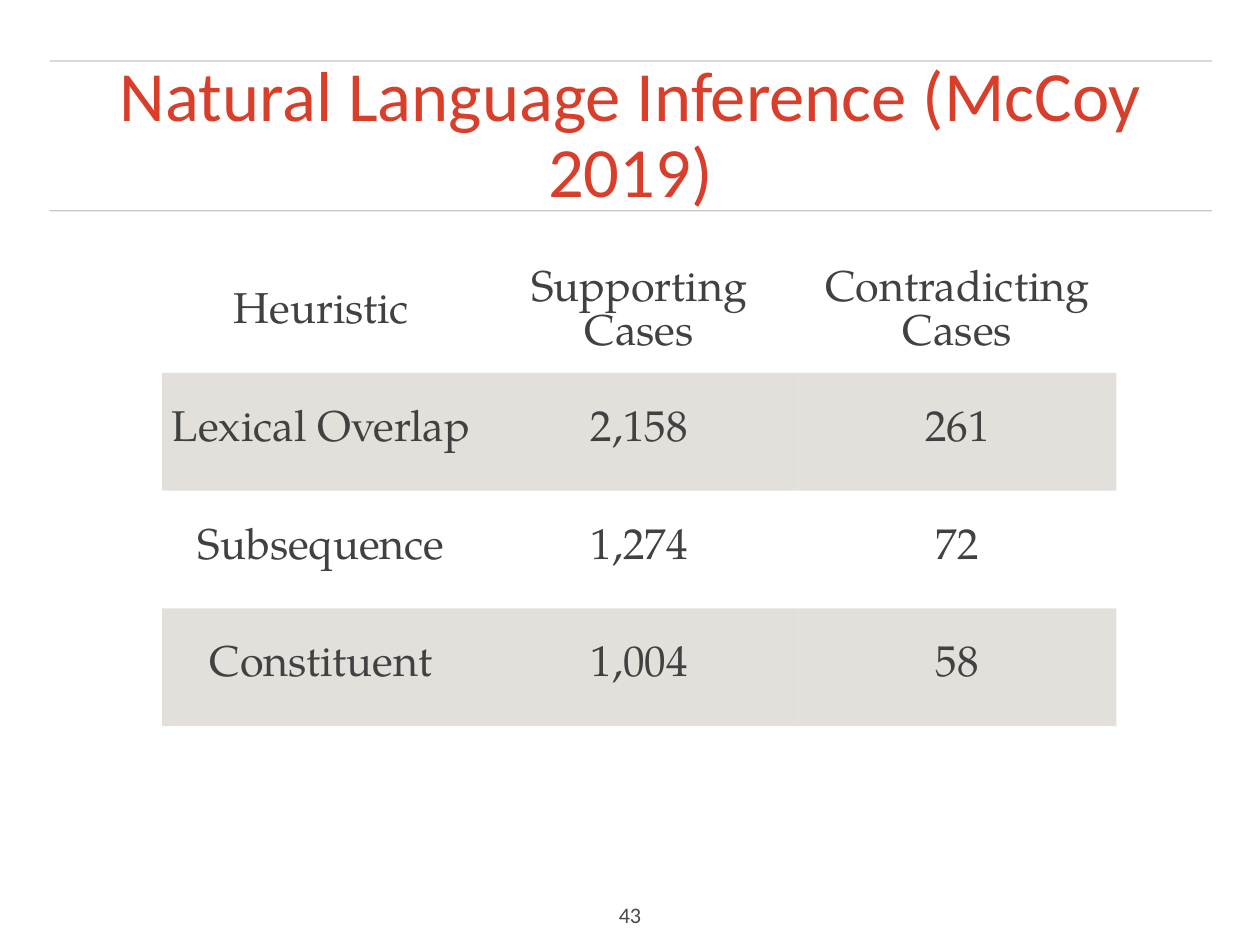
from dataclasses import dataclass

from lxml import etree
from pptx import Presentation
from pptx.dml.color import RGBColor
from pptx.enum.shapes import MSO_CONNECTOR
from pptx.enum.text import MSO_ANCHOR, PP_ALIGN
from pptx.oxml.ns import qn
from pptx.util import Inches, Pt

STRAIGHT = MSO_CONNECTOR.STRAIGHT
MIDDLE = MSO_ANCHOR.MIDDLE
TOP = MSO_ANCHOR.TOP
CENTER = PP_ALIGN.CENTER
NO_GRID_STYLE = "{2D5ABB26-0587-4C30-8999-92F81FD0307C}"


@dataclass(frozen=True)
class Theme:
    heading_font: str = "Calibri"
    table_font: str = "TeX Gyre Pagella"
    title_color: str = "D93E2B"
    number_color: str = "4C4946"
    table_color: str = "414141"
    rule_color: str = "444444"
    band_color: str = "C9C3BA"
    title_size: float = 57.4
    number_size: float = 18
    table_size: float = 35
    rule_width: float = 1
    rule_opacity: int = 30
    band_opacity: int = 50
    inset: float = 0.06


class SlideBuilder:
    def __init__(self, slide, theme):
        self.slide = slide
        self.theme = theme

    def set_fill(self, fill, element, color, opacity):
        fill.solid()
        fill.fore_color.rgb = RGBColor.from_string(color)
        for color_element in element.iter(qn("a:srgbClr")):
            etree.SubElement(color_element, qn("a:alpha"), val=str(opacity * 1000))

    def add_run(self, paragraph, text, font, size, color):
        paragraph.alignment = CENTER
        run = paragraph.add_run()
        run.text = text
        run.font.name = font
        run.font.size = Pt(size)
        run.font.color.rgb = RGBColor.from_string(color)

    def set_insets(self, area):
        area.margin_left = area.margin_right = Inches(self.theme.inset)
        area.margin_top = area.margin_bottom = Inches(self.theme.inset)

    def add_rule(self, left, right, y):
        theme = self.theme
        connector = self.slide.shapes.add_connector(
            STRAIGHT, Inches(left), Inches(y), Inches(right), Inches(y))
        connector.line.width = Pt(theme.rule_width)
        properties = connector._element.spPr
        self.set_fill(connector.line.fill, properties, theme.rule_color, theme.rule_opacity)
        etree.SubElement(properties, qn("a:effectLst"))

    def add_text(self, box, text, size, color, anchor=TOP, wrap=True, spacing=1.0):
        shape = self.slide.shapes.add_textbox(*map(Inches, box))
        frame = shape.text_frame
        frame.word_wrap = wrap
        frame.vertical_anchor = anchor
        self.set_insets(frame)
        paragraph = frame.paragraphs[0]
        paragraph.line_spacing = spacing
        self.add_run(paragraph, text, self.theme.heading_font, size, color)

    def add_table(self, box, rows):
        theme = self.theme
        shape = self.slide.shapes.add_table(
            len(rows), len(rows[0]), *map(Inches, box))
        table = shape.table
        table.first_row = table.horz_banding = False
        table._tbl.tblPr.find(qn("a:tableStyleId")).text = NO_GRID_STYLE
        for row_index, row in enumerate(rows):
            for column_index, value in enumerate(row):
                cell = table.cell(row_index, column_index)
                cell.vertical_anchor = MIDDLE
                self.set_insets(cell)
                if row_index % 2:
                    self.set_fill(cell.fill, cell._tc.tcPr,
                                  theme.band_color, theme.band_opacity)
                else:
                    cell.fill.background()
                if value:
                    self.add_run(cell.text_frame.paragraphs[0], value,
                                 theme.table_font, theme.table_size, theme.table_color)


def main():
    presentation = Presentation()
    presentation.slide_width = Inches(14.22)
    presentation.slide_height = Inches(10.67)
    theme = Theme()
    slide = presentation.slides.add_slide(presentation.slide_layouts[6])
    builder = SlideBuilder(slide, theme)

    # Title between two rules
    for y in (0.69, 2.38):
        builder.add_rule(0.56, 13.68, y)
    builder.add_text((0.56, 0.88, 13.11, 1.33), "Natural Language Inference (McCoy 2019)",
                     theme.title_size, theme.title_color, anchor=MIDDLE, spacing=0.9)

    # Slide number
    builder.add_text((6.92, 10.12, 0.38, 0.44), "43",
                     theme.number_size, theme.number_color, wrap=False)

    # Cases per heuristic, with an empty last row
    builder.add_table((1.83, 2.88, 10.77, 6.65), [
        ("Heuristic", "Supporting Cases", "Contradicting Cases"),
        ("Lexical Overlap", "2,158", "261"),
        ("Subsequence", "1,274", "72"),
        ("Constituent", "1,004", "58"),
        ("", "", ""),
    ])

    presentation.save("out.pptx")


if __name__ == "__main__":
    main()
